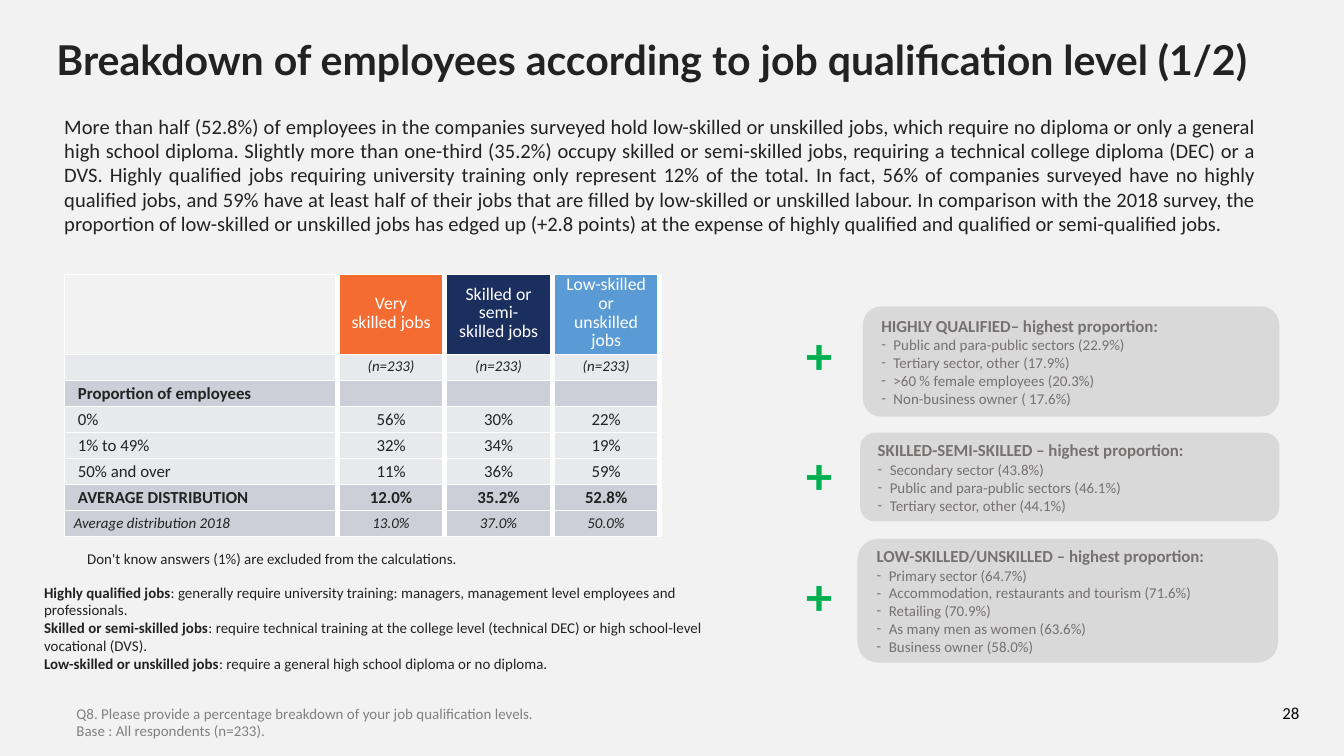
from dataclasses import dataclass
from lxml.etree import SubElement
from pptx import Presentation
from pptx.dml.color import RGBColor as RGB
from pptx.enum.shapes import MSO_SHAPE as Shape
from pptx.enum.text import MSO_ANCHOR as Anchor, PP_ALIGN as Align
from pptx.oxml import parse_xml
from pptx.oxml.ns import nsdecls, qn
from pptx.util import Inches, Pt


@dataclass
class Theme:
    back: str = "F2F2F2"
    ink: str = "222223"
    black: str = "000000"
    white: str = "FFFFFF"
    gray: str = "808080"
    panel: str = "D9D9D9"
    label: str = "767171"
    green: str = "00B050"
    orange: str = "F46C31"
    navy: str = "1B2F5F"
    blue: str = "5B9BD5"
    light: str = "E7E9EC"
    dark: str = "CCCFD7"
    title: float = 22
    body: float = 11
    head: float = 9.5
    text: float = 9
    small: float = 8
    plus: float = 28


theme = Theme()


def style(para, size, color, bold=False, italic=False, align=Align.LEFT, face="Calibri"):
    para.alignment = align
    font = para.font
    font.name, font.size, font.bold, font.italic = face, Pt(size), bold, italic
    font.color.rgb = RGB.from_string(color)


def add_text(box, lines, size, color, **look):
    """Add a text box; its lines are strings or lists of (text, bold) runs."""
    frame = slide.shapes.add_textbox(*map(Inches, box)).text_frame
    frame.word_wrap = True
    for i, line in enumerate(lines):
        para = frame.add_paragraph() if i else frame.paragraphs[0]
        style(para, size, color, **look)
        for words, bold in [(line, None)] if isinstance(line, str) else line:
            run = para.add_run()
            run.text = words
            run.font.bold = bold
    return frame


# Slide, 16:9
deck = Presentation()
deck.slide_width = Inches(10)
deck.slide_height = deck.slide_width * 9 // 16
slide = deck.slides.add_slide(deck.slide_layouts[6])
slide.background.fill.solid()
slide.background.fill.fore_color.rgb = RGB.from_string(theme.back)

# Page number
page = add_text((9.35, 5.13, 0.51, 0.3), ["28"], theme.text, theme.black, align=Align.CENTER)
page.vertical_anchor = Anchor.BOTTOM

# Title
title = add_text((0.35, 0.01, 9.38, 0.91),
                 ["Breakdown of employees according to job qualification level (1/2)"],
                 theme.title, theme.ink, bold=True, face="Lato")
title.vertical_anchor = Anchor.MIDDLE
title.margin_left = title.margin_right = Inches(0.07)
title.paragraphs[0].line_spacing = 0.9

# Summary
body = add_text((0.38, 0.85, 9.07, 0.91), [
    "More than half (52.8%) of employees in the companies surveyed hold low-skilled or unskilled "
    "jobs, which require no diploma or only a general high school diploma. Slightly more than "
    "one-third (35.2%) occupy skilled or semi-skilled jobs, requiring a technical college diploma "
    "(DEC) or a DVS. Highly qualified jobs requiring university training only represent 12% of the "
    "total. In fact, 56% of companies surveyed have no highly qualified jobs, and 59% have at least "
    "half of their jobs that are filled by low-skilled or unskilled labour. In comparison with the "
    "2018 survey, the proportion of low-skilled or unskilled jobs has edged up (+2.8 points) at the "
    "expense of highly qualified and qualified or semi-qualified jobs."],
    theme.body, theme.ink, align=Align.JUSTIFY)
body.margin_top = body.margin_bottom = 0
body.paragraphs[0].line_spacing = Pt(13)

# Table rows: fill, size, bold, italic, cells
rows = [
    (None, theme.head, False, False,
     ["", "Very skilled jobs", "Skilled or semi-skilled jobs", "Low-skilled or unskilled jobs"]),
    (theme.light, theme.small, False, True, ["", "(n=233)", "(n=233)", "(n=233)"]),
    (theme.dark, theme.text, True, False, ["Proportion of employees", "", "", ""]),
    (theme.light, theme.text, False, False, ["0%", "56%", "30%", "22%"]),
    (theme.light, theme.text, False, False, ["1% to 49%", "32%", "34%", "19%"]),
    (theme.light, theme.text, False, False, ["50% and over", "11%", "36%", "59%"]),
    (theme.dark, theme.text, True, False, ["AVERAGE DISTRIBUTION", "12.0%", "35.2%", "52.8%"]),
    (theme.dark, theme.small, False, True,
     ["Average distribution 2018", "13.0%", "37.0%", "50.0%"]),
]
heads = [None, theme.orange, theme.navy, theme.blue]
table = slide.shapes.add_table(len(rows), 4, *map(Inches, (0.48, 2.04, 4.42, 1.95))).table
table.first_row = table.horz_banding = False
for col, width in zip(table.columns, [2.03, 0.8, 0.8, 0.8]):
    col.width = Inches(width)

for r, (tone, size, bold, italic, words) in enumerate(rows):
    table.rows[r].height = Pt(14) if r else Inches(0.59)
    for c, word in enumerate(words):
        cell = table.cell(r, c)
        side, edge = 0.1, 0.02
        if r == len(rows) - 1:
            side, edge = 0.01 if c else 0.07, 0
        cell.margin_left = cell.margin_right = Inches(side)
        cell.margin_top = cell.margin_bottom = Inches(edge)
        cell.vertical_anchor = Anchor.TOP if r == 1 else Anchor.MIDDLE
        # Text
        cell.text = word
        para = cell.text_frame.paragraphs[0]
        style(para, size, theme.ink if r else theme.white, bold, italic,
              Align.CENTER if c else Align.LEFT)
        if r == 0:
            para.line_spacing = Pt(10)
        if not word:
            SubElement(para._p, qn("a:endParaRPr"), sz=str(int(size * 100)))
        # Fill
        fill = tone or heads[c]
        if fill:
            cell.fill.solid()
            cell.fill.fore_color.rgb = RGB.from_string(fill)
        else:
            cell.fill.background()
        # White borders, thick between columns
        widths = {"L": 3 if c else 0.75, "R": 3, "T": 0.75, "B": 0.75}
        for i, (name, width) in enumerate(widths.items()):
            cell._tc.get_or_add_tcPr().insert(i, parse_xml(
                f'<a:ln{name} {nsdecls("a")} w="{Pt(width)}"><a:solidFill>'
                f'<a:srgbClr val="{theme.white}"/></a:solidFill></a:ln{name}>'))

# Source question
add_text((0.47, 5.19, 8.08, 0.37),
         ["Q8. Please provide a percentage breakdown of your job qualification levels.",
          "Base : All respondents (n=233)."], theme.small, theme.gray)

# Panels, each with its plus sign
panels = [
    ((6.42, 2.28, 3.1, 0.82), 2.35, "HIGHLY QUALIFIED– highest proportion:",
     ["Public and para-public sectors (22.9%)", "Tertiary sector, other (17.9%)",
      ">60 % female employees (20.3%)", "Non-business owner ( 17.6%)"]),
    ((6.4, 3.22, 3.12, 0.66), 3.24, "SKILLED-SEMI-SKILLED – highest proportion:",
     ["Secondary sector (43.8%)", "Public and para-public sectors (46.1%)",
      "Tertiary sector, other (44.1%)"]),
    ((6.38, 4.01, 3.13, 0.92), 4.14, "LOW-SKILLED/UNSKILLED – highest proportion:",
     ["Primary sector (64.7%)", "Accommodation, restaurants and tourism (71.6%)",
      "Retailing (70.9%)", "As many men as women (63.6%)", "Business owner (58.0%)"]),
]
for box, top, head, items in panels:
    panel = slide.shapes.add_shape(Shape.ROUNDED_RECTANGLE, *map(Inches, box))
    panel.shadow.inherit = False
    panel.fill.solid()
    panel.fill.fore_color.rgb = RGB.from_string(theme.panel)
    panel.line.fill.background()
    frame = panel.text_frame
    frame.word_wrap = True
    frame.vertical_anchor = Anchor.MIDDLE
    frame.text = head
    style(frame.paragraphs[0], theme.text, theme.label, bold=True)
    for item in items:
        para = frame.add_paragraph()
        para.text = item
        props = para._p.get_or_add_pPr()
        props.set("marL", str(Inches(0.09)))
        props.set("indent", str(-Inches(0.09)))
        SubElement(props, qn("a:buFont"), typeface="Calibri")
        SubElement(props, qn("a:buChar"), char="-")
        style(para, theme.small, theme.label)
    add_text((5.6, top, 0.99, 0.57), ["+"], theme.plus, theme.green,
             bold=True, align=Align.CENTER)

# Definitions and note
add_text((0.23, 4.29, 5.2, 0.77), [
    [("Highly qualified jobs", True),
     (": generally require university training: managers, management level employees and "
      "professionals.", False)],
    [("Skilled or semi-skilled jobs", True),
     (": require technical training at the college level (technical DEC) or high school-level "
      "vocational (DVS).", False)],
    [("Low-skilled or unskilled jobs", True),
     (": require a general high school diploma or no diploma.", False)],
], theme.small, theme.ink)
add_text((0.55, 4.04, 3.22, 0.24),
         ["Don't know answers (1%) are excluded from the calculations."],
         theme.small, theme.ink)

deck.save("out.pptx")
